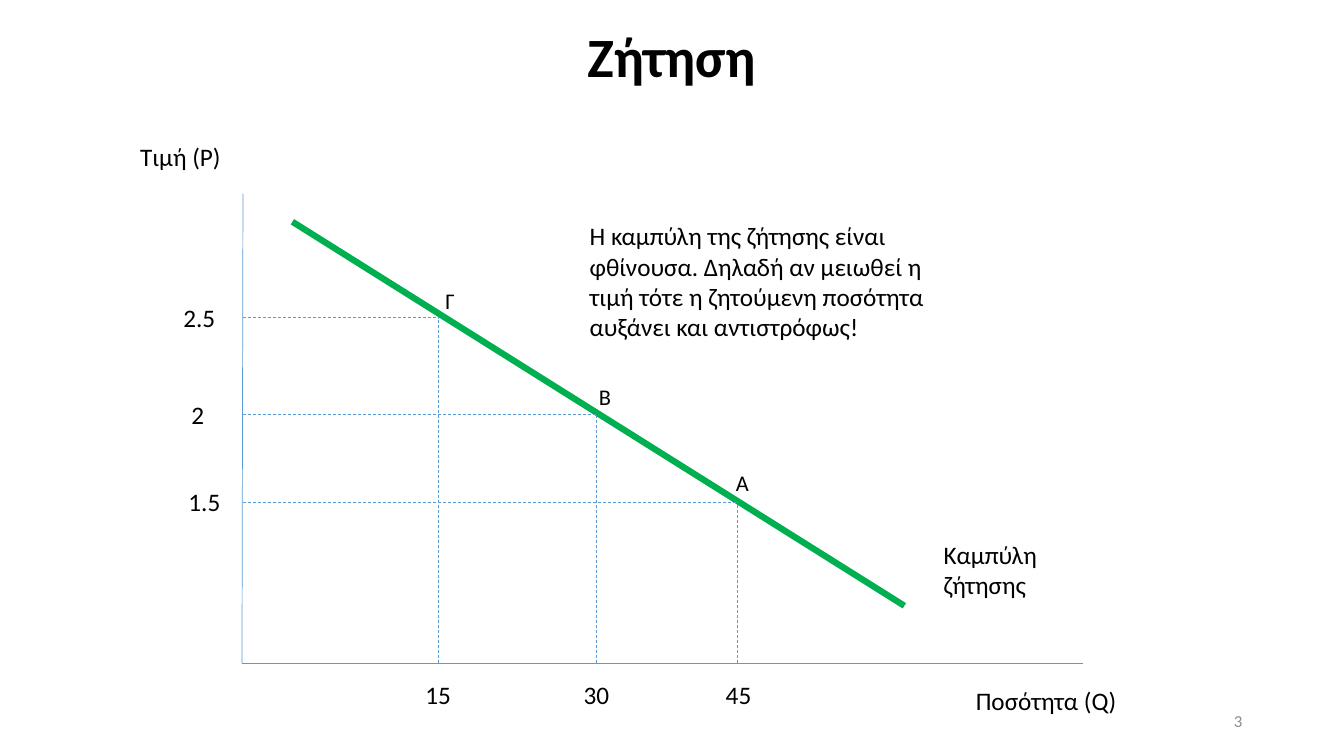
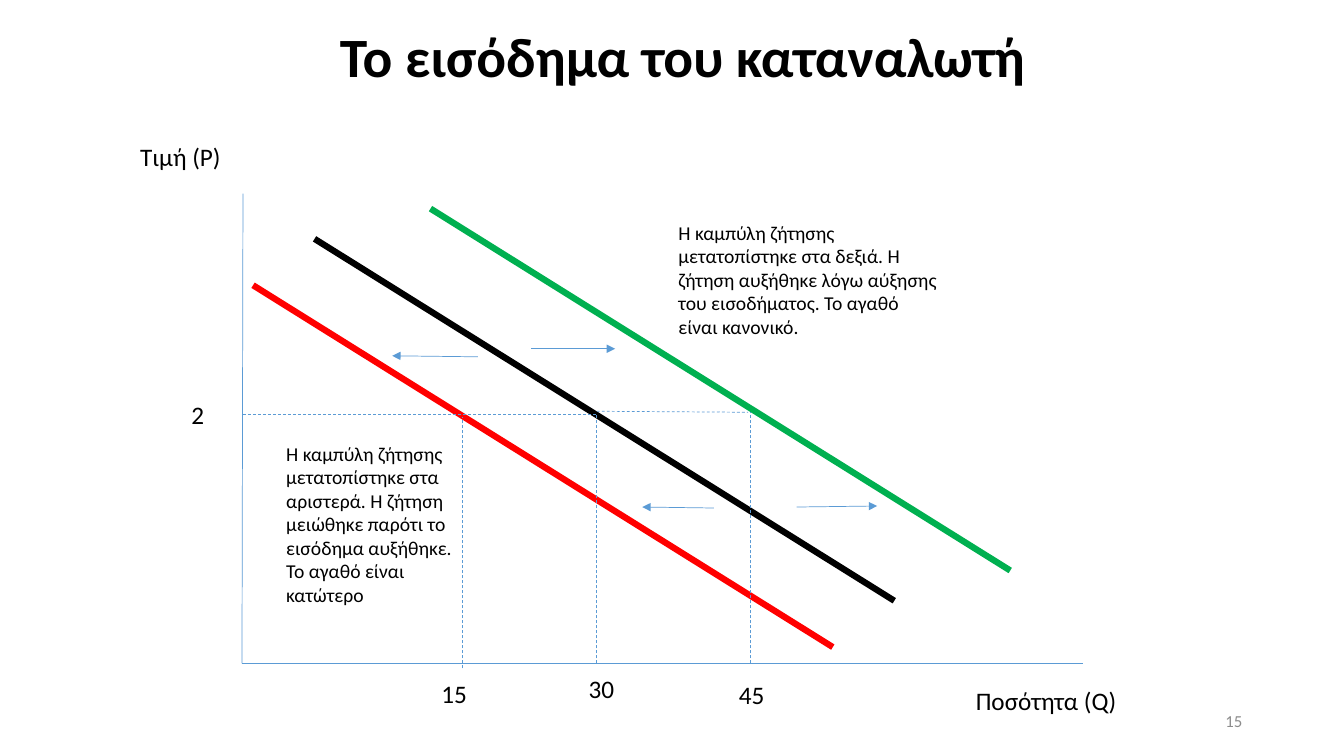
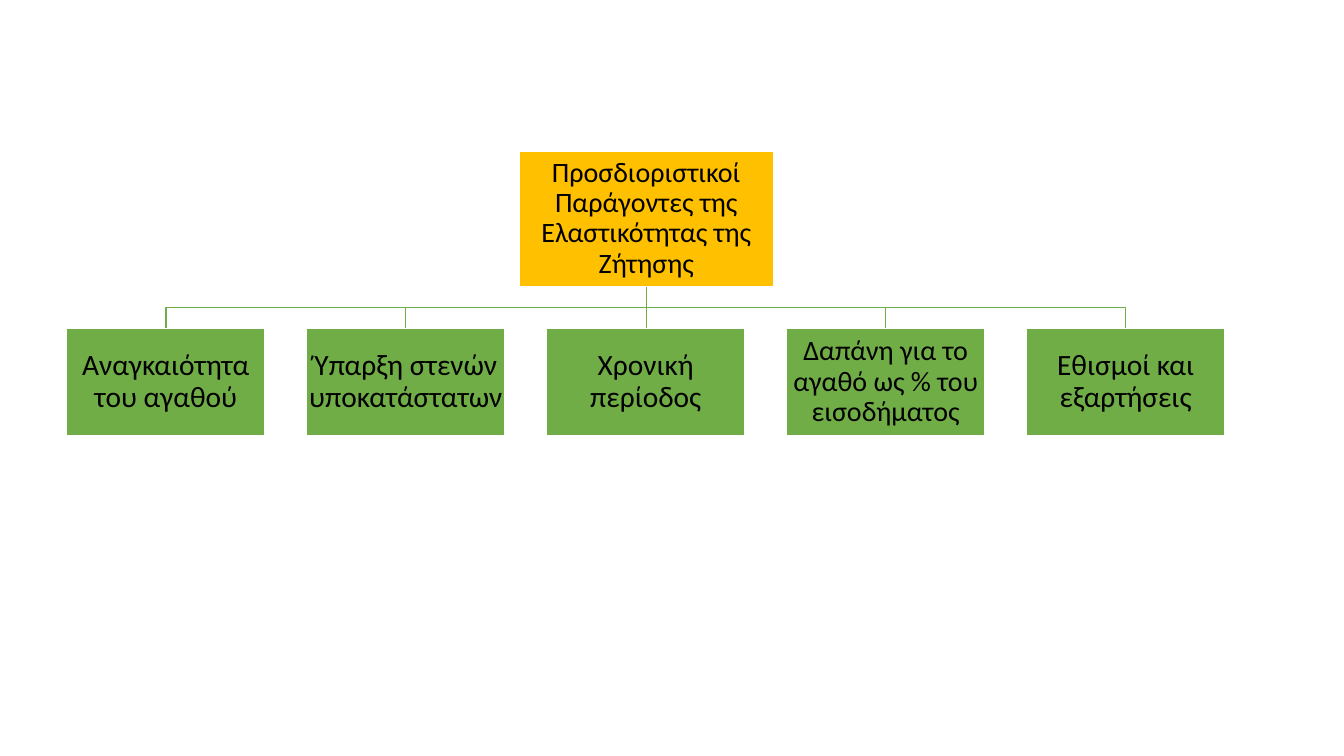
from dataclasses import dataclass

from lxml.etree import SubElement
from pptx import Presentation
from pptx.dml.color import RGBColor
from pptx.enum.dml import MSO_LINE
from pptx.enum.shapes import MSO_CONNECTOR, MSO_SHAPE
from pptx.enum.text import MSO_ANCHOR, MSO_AUTO_SIZE, PP_ALIGN
from pptx.oxml.ns import qn
from pptx.slide import Slide
from pptx.text.text import TextFrame
from pptx.util import Inches, Pt

FONT = "Calibri"
COLORS = {
    "text": "000000",
    "muted": "8C8C8C",
    "axis": "5B9BD5",
    "green": "00B050",
    "red": "FF0000",
    "branch": "70AD47",
    "root": "FFC000",
    "white": "FFFFFF",
}
AXIS_LEFT = 2.41
AXIS_TOP = 1.92
AXIS_BOTTOM = 6.58
AXIS_RIGHT = 10.74
LABEL_HEIGHT = 0.4


@dataclass(frozen=True)
class Line:
    start: tuple[float, float]
    end: tuple[float, float]
    color: str = "axis"
    weight: float = 0.5
    dashed: bool = False
    arrow: bool = False


@dataclass(frozen=True)
class Label:
    text: str
    left: float
    top: float
    width: float
    height: float = LABEL_HEIGHT
    size: float = 18
    wrap: bool = False


@dataclass(frozen=True)
class Node:
    text: str
    left: float
    top: float
    width: float
    height: float
    color: str
    size: float


def rgb(name: str) -> RGBColor:
    return RGBColor.from_string(COLORS[name])


def format_text(frame: TextFrame, size: float, color: str = "text", bold: bool = False) -> None:
    for para in frame.paragraphs:
        for span in para.runs:
            span.font.name = FONT
            span.font.size = Pt(size)
            span.font.bold = bold
            span.font.color.rgb = rgb(color)


def draw_line(slide: Slide, line: Line) -> None:
    connector = slide.shapes.add_connector(
        MSO_CONNECTOR.STRAIGHT, *(Inches(value) for value in line.start + line.end)
    )
    connector.line.color.rgb = rgb(line.color)
    connector.line.width = Pt(line.weight)
    if line.dashed:
        connector.line.dash_style = MSO_LINE.DASH
    properties = connector._element.spPr
    if line.arrow:
        SubElement(properties.find(qn("a:ln")), qn("a:tailEnd"), type="triangle")
    SubElement(properties, qn("a:effectLst"))


def draw_label(slide: Slide, label: Label) -> TextFrame:
    box = slide.shapes.add_textbox(
        Inches(label.left), Inches(label.top), Inches(label.width), Inches(label.height)
    )
    frame = box.text_frame
    frame.word_wrap = label.wrap
    frame.auto_size = MSO_AUTO_SIZE.SHAPE_TO_FIT_TEXT
    frame.text = label.text
    format_text(frame, label.size)
    return frame


def draw_node(slide: Slide, node: Node) -> None:
    box = slide.shapes.add_shape(
        MSO_SHAPE.RECTANGLE,
        Inches(node.left), Inches(node.top), Inches(node.width), Inches(node.height),
    )
    box.shadow.inherit = False
    box.fill.solid()
    box.fill.fore_color.rgb = rgb(node.color)
    box.line.color.rgb = rgb("white")
    box.line.width = Pt(1)
    frame = box.text_frame
    frame.word_wrap = True
    frame.vertical_anchor = MSO_ANCHOR.MIDDLE
    frame.margin_left = frame.margin_right = Inches(0.01)
    frame.margin_top = frame.margin_bottom = Inches(0.01)
    frame.text = node.text
    para = frame.paragraphs[0]
    para.alignment = PP_ALIGN.CENTER
    para.line_spacing = 0.9
    format_text(frame, node.size)


def draw_branch(slide: Slide, root: Node, child: Node) -> None:
    start_x = root.left + root.width / 2
    start_y = root.top + root.height
    end_x = child.left + child.width / 2
    if abs(end_x - start_x) < 0.02:
        draw_line(slide, Line((start_x, start_y), (start_x, child.top), "branch", 1))
        return
    middle_y = (start_y + child.top) / 2
    corners = [(start_x, middle_y), (end_x, middle_y), (end_x, child.top)]
    builder = slide.shapes.build_freeform(Inches(start_x), Inches(start_y))
    builder.add_line_segments([(Inches(x), Inches(y)) for x, y in corners], close=False)
    branch = builder.convert_to_shape()
    branch.shadow.inherit = False
    branch.fill.background()
    branch.line.color.rgb = rgb("branch")
    branch.line.width = Pt(1)


def add_graph_slide(
    deck: Presentation, title: str, title_width: float, number: str,
    lines: list[Line], labels: list[Label],
) -> None:
    slide = deck.slides.add_slide(deck.slide_layouts[5])
    heading = slide.shapes.title
    heading.left, heading.top = Inches(2.35), Inches(0.25)
    heading.width, heading.height = Inches(title_width), Inches(0.68)
    frame = heading.text_frame
    frame.auto_size = MSO_AUTO_SIZE.NONE
    frame.vertical_anchor = MSO_ANCHOR.MIDDLE
    frame.text = title
    frame.paragraphs[0].alignment = PP_ALIGN.CENTER
    frame.paragraphs[0].line_spacing = 0.9
    format_text(frame, 39.6, bold=True)

    footer = draw_label(slide, Label(number, 9.42, 6.95, 3, size=12, wrap=True))
    footer.auto_size = MSO_AUTO_SIZE.NONE
    footer.vertical_anchor = MSO_ANCHOR.MIDDLE
    footer.paragraphs[0].alignment = PP_ALIGN.RIGHT
    format_text(footer, 12, "muted")

    axes = [
        Line((AXIS_LEFT, AXIS_TOP), (2.4, AXIS_BOTTOM)),
        Line((AXIS_RIGHT, AXIS_BOTTOM), (2.4, AXIS_BOTTOM)),
    ]
    axis_labels = [
        Label("Τιμή (P)", 1.29, 1.35, 1.12, wrap=True),
        Label("Ποσότητα (Q)", 9.58, 6.75, 1.74, wrap=True),
        Label("2", 1.8, 3.91, 0.33),
    ]
    for line in axes + lines:
        draw_line(slide, line)
    for label in axis_labels + labels:
        draw_label(slide, label)


def guide_lines(points: list[tuple[float, float]]) -> list[Line]:
    guides = []
    for x, y in points:
        guides.append(Line((AXIS_LEFT, y), (x, y), dashed=True))
        guides.append(Line((x, AXIS_BOTTOM), (x, y), dashed=True))
    return guides


def add_demand_slide(deck: Presentation) -> None:
    curve = Line((2.9, 2.2), (8.97, 6.01), "green", 4.5)
    guides = guide_lines([(4.35, 3.15), (5.92, 4.11), (7.31, 4.98)])
    labels = [
        Label(
            "H καμπύλη της ζήτησης είναι φθίνουσα. Δηλαδή αν μειωθεί η τιμή τότε "
            "η ζητούμενη ποσότητα αυξάνει και αντιστρόφως!",
            5.75, 2.14, 3.92, 1.31, wrap=True,
        ),
        Label("Καμπύλη ζήτησης", 9.26, 5.3, 1.85, 0.71, wrap=True),
        Label("2.5", 1.72, 2.95, 0.52),
        Label("1.5", 1.77, 4.78, 0.52),
        Label("15", 4.12, 6.69, 0.46),
        Label("30", 5.69, 6.69, 0.46),
        Label("45", 7.1, 6.69, 0.46),
        Label("Γ", 4.32, 2.8, 0.29, 0.37, 16),
        Label("Β", 5.84, 3.75, 0.32, 0.37, 16),
        Label("Α", 7.2, 4.61, 0.33, 0.37, 16),
    ]
    add_graph_slide(deck, "Ζήτηση", 8.62, "3", [curve] + guides, labels)


def add_income_slide(deck: Presentation) -> None:
    run, rise = 5.75, 3.59
    starts = [(3.12, 2.37, "text"), (4.27, 2.07, "green"), (2.51, 2.83, "red")]
    curves = [Line((x, y), (x + run, y + rise), color, 4.5) for x, y, color in starts]
    guides = guide_lines([(5.92, 4.11)]) + [
        Line((5.92, 4.08), (7.42, 4.09), dashed=True),
        Line((7.44, AXIS_BOTTOM), (7.44, 4.09), dashed=True),
        Line((4.59, 6.63), (4.59, 4.14), dashed=True),
    ]
    arrows = [
        Line(start, end, arrow=True)
        for start, end in [
            ((5.27, 3.46), (6.1, 3.46)),
            ((7.9, 5.03), (8.7, 5.02)),
            ((4.74, 3.54), (3.89, 3.53)),
            ((7.08, 5.04), (6.37, 5.03)),
        ]
    ]
    labels = [
        Label("15", 4.28, 6.68, 0.46),
        Label("30", 5.74, 6.63, 0.46),
        Label("45", 7.23, 6.69, 0.46),
        Label(
            "Η καμπύλη ζήτησης μετατοπίστηκε στα δεξιά. Η ζήτηση αυξήθηκε λόγω "
            "αύξησης του εισοδήματος. Το αγαθό είναι κανονικό.",
            6.63, 2.14, 2.8, 1.28, 14, True,
        ),
        Label(
            "Η καμπύλη ζήτησης μετατοπίστηκε στα αριστερά. Η ζήτηση μειώθηκε "
            "παρότι το εισόδημα αυξήθηκε. Το αγαθό είναι κατώτερο",
            2.74, 4.33, 1.98, 1.75, 14, True,
        ),
    ]
    add_graph_slide(
        deck, "Το εισόδημα του καταναλωτή", 8.84, "15", curves + guides + arrows, labels
    )


def add_factors_slide(deck: Presentation) -> None:
    slide = deck.slides.add_slide(deck.slide_layouts[6])
    root = Node(
        "Προσδιοριστικοί Παράγοντες της Ελαστικότητας της Ζήτησης",
        5.15, 1.5, 2.52, 1.34, "root", 20,
    )
    factors = [
        ("Αναγκαιότητα του αγαθού", 21),
        ("Ύπαρξη στενών υποκατάστατων", 21),
        ("Χρονική περίοδος", 21),
        ("Δαπάνη για το αγαθό ως % του εισοδήματος", 20),
        ("Εθισμοί και εξαρτήσεις", 21),
    ]
    pitch = 2.38
    children = [
        Node(text, 0.66 + index * pitch, 3.26, 1.97, 1.06, "branch", size)
        for index, (text, size) in enumerate(factors)
    ]
    for child in children:
        draw_branch(slide, root, child)
    for node in [root] + children:
        draw_node(slide, node)


def main() -> None:
    deck = Presentation()
    deck.slide_width = Inches(13.33)
    deck.slide_height = Inches(7.5)
    add_demand_slide(deck)
    add_income_slide(deck)
    add_factors_slide(deck)
    deck.save("out.pptx")


if __name__ == "__main__":
    main()
